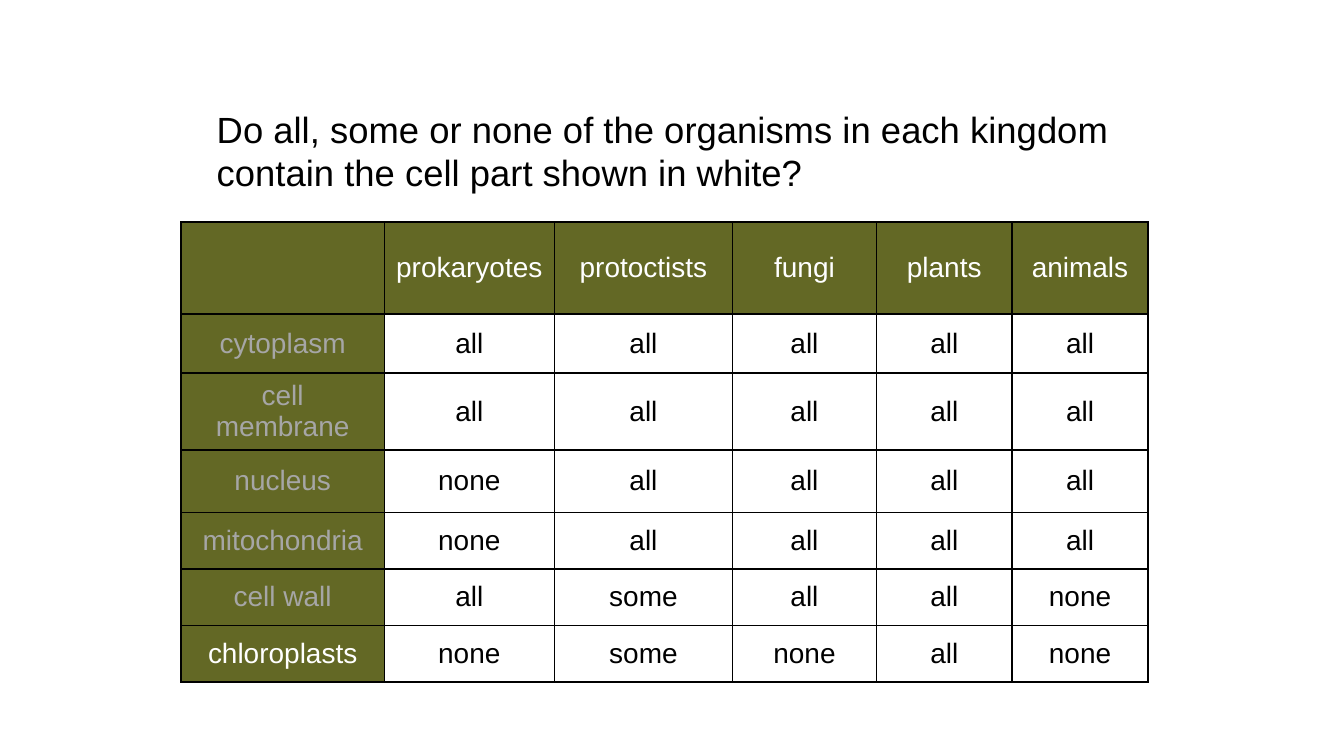
from lxml import etree
from pptx import Presentation
from pptx import util as u
from pptx.dml import color
from pptx.enum import text
from pptx.oxml import ns

theme = dict(font="Arial", head=19.5, body=15, ink="000000", light="FFFFFF",
             dim="A6A6A6", olive="636825", rule=1)
wide = [108.9, 91.1, 95.5, 77, 72.8, 72.7]
high = [49.2, 31.6, 41.3, 33.5, 30.3, 30.3, 30.3]
grid = [
    ["", "prokaryotes", "protoctists", "fungi", "plants", "animals"],
    ["cytoplasm", "all", "all", "all", "all", "all"],
    ["cell membrane", "all", "all", "all", "all", "all"],
    ["nucleus", "none", "all", "all", "all", "all"],
    ["mitochondria", "none", "all", "all", "all", "all"],
    ["cell wall", "all", "some", "all", "all", "none"],
    ["chloroplasts", "none", "some", "none", "all", "none"],
]


def write(para, words, size, tone):
    run = para.add_run()
    run.text = words
    for key, val in dict(name=theme["font"], size=u.Pt(size)).items():
        setattr(run.font, key, val)
    run.font.color.rgb = color.RGBColor.from_string(theme[tone])


def edge(cell):
    props = cell._tc.get_or_add_tcPr()
    for side in ("lnL", "lnR", "lnT", "lnB"):
        line = etree.SubElement(props, ns.qn("a:" + side), w=str(u.Pt(theme["rule"])))
        fill = etree.SubElement(line, ns.qn("a:solidFill"))
        etree.SubElement(fill, ns.qn("a:srgbClr"), val=theme["ink"])


deck = Presentation()
deck.slide_width, deck.slide_height = u.Pt(720), u.Pt(405)
slide = deck.slides.add_slide(deck.slide_layouts[6])

frame = slide.shapes.add_table(len(high), len(wide), u.Pt(97), u.Pt(119),
                               u.Pt(sum(wide)), u.Pt(sum(high)))
table = frame.table
for key, val in dict(first_row=False, horz_banding=False).items():
    setattr(table, key, val)
for col, size in zip(table.columns, wide):
    col.width = u.Pt(size)
for row, size in zip(table.rows, high):
    row.height = u.Pt(size)

form = dict(vertical_anchor=text.MSO_ANCHOR.MIDDLE, margin_left=u.Pt(5.4),
            margin_right=u.Pt(5.4), margin_top=u.Pt(2.7), margin_bottom=u.Pt(2.7))
last = len(grid) - 1
for r, line in enumerate(grid):
    for c, words in enumerate(line):
        cell = table.cell(r, c)
        for key, val in form.items():
            setattr(cell, key, val)
        edge(cell)
        if r == 0 or c == 0:
            cell.fill.solid()
            cell.fill.fore_color.rgb = color.RGBColor.from_string(theme["olive"])
            tone = "light" if r in (0, last) else "dim"
        else:
            cell.fill.background()
            tone = "ink"
        if words:
            para = cell.text_frame.paragraphs[0]
            para.alignment = text.PP_ALIGN.CENTER
            write(para, words, theme["body"], tone)

box = slide.shapes.add_textbox(u.Pt(109), u.Pt(53.6), u.Pt(493.2), u.Pt(54.7))
for key, val in dict(word_wrap=True, auto_size=text.MSO_AUTO_SIZE.SHAPE_TO_FIT_TEXT).items():
    setattr(box.text_frame, key, val)
write(box.text_frame.paragraphs[0],
      "Do all, some or none of the organisms in each kingdom "
      "contain the cell part shown in white?", theme["head"], "ink")

deck.save("out.pptx")
